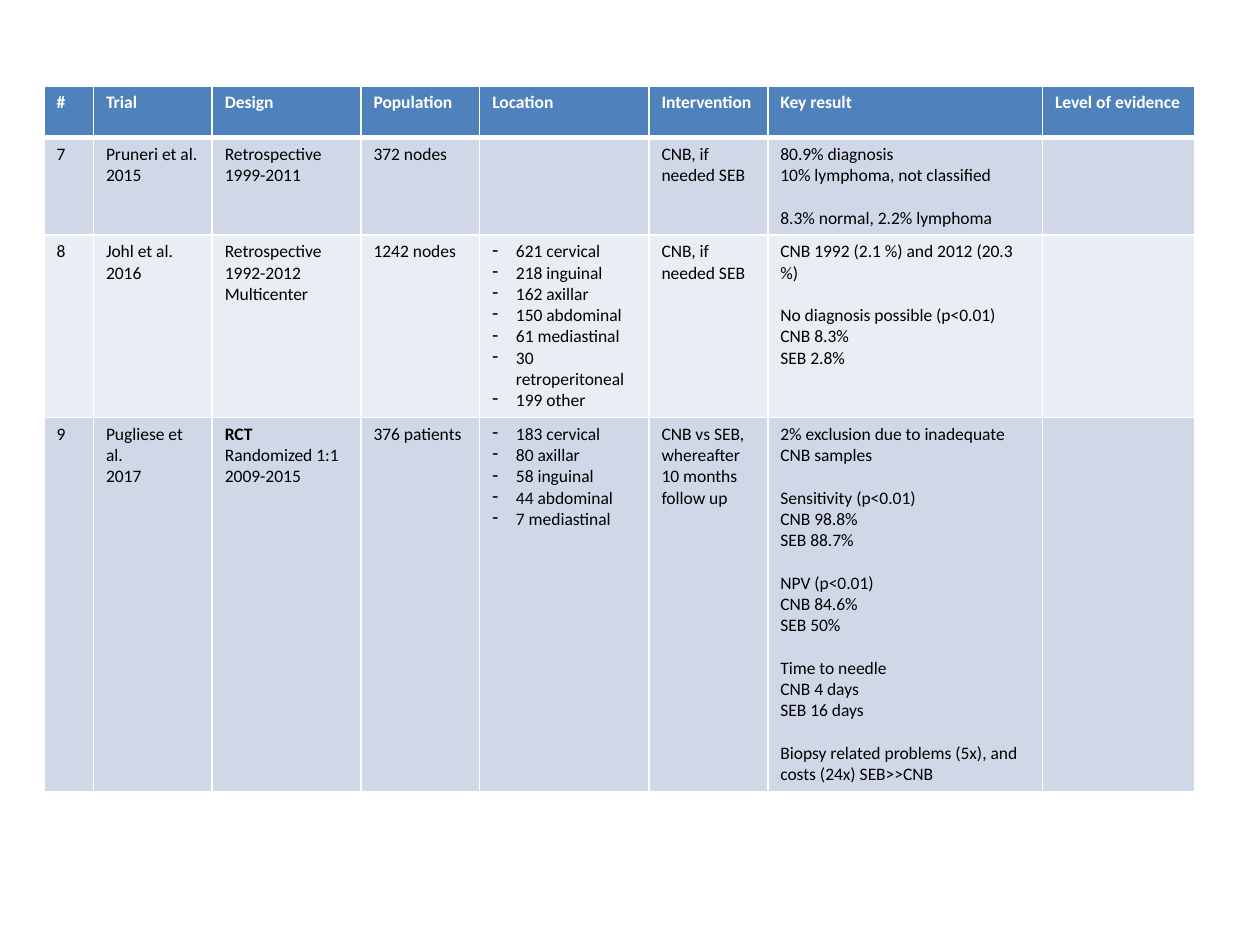
from dataclasses import dataclass

from lxml.etree import SubElement
from pptx import Presentation
from pptx.dml.color import RGBColor
from pptx.oxml.ns import qn
from pptx.util import Pt

FONT_SIZE = 10
BLANK_LINE = 12.2
BULLET_INDENT = 13.5
ROW_HEIGHT = 29.5
COLUMN_WIDTHS = (28.2, 67.9, 85, 67.9, 96.7, 67.9, 157, 87.1)
HEADER_FILL, ODD_FILL, EVEN_FILL = "4F81BD", "D0D8E8", "E9EDF4"
WHITE, BLACK = "FFFFFF", "000000"


@dataclass(frozen=True)
class CellText:
    """Groups of lines; a gap separates one group from the next."""
    groups: tuple[tuple[str, ...], ...] = ()
    bulleted: bool = False
    bold_lines: tuple[str, ...] = ()


def lines(*texts: str) -> CellText:
    return CellText((texts,))


def groups(*line_groups: tuple[str, ...]) -> CellText:
    return CellText(line_groups)


def bullets(*texts: str) -> CellText:
    return CellText((texts,), bulleted=True)


HEADERS = ("#", "Trial", "Design", "Population", "Location",
           "Intervention", "Key result", "Level of evidence")
EMPTY = CellText()

TRIALS = (
    (lines("7"), lines("Pruneri et al.", "2015"),
     lines("Retrospective", "1999-2011"), lines("372 nodes"), EMPTY,
     lines("CNB, if needed SEB"),
     groups(("80.9% diagnosis", "10% lymphoma, not classified"),
            ("8.3% normal, 2.2% lymphoma",)),
     EMPTY),
    (lines("8"), lines("Johl et al.", "2016"),
     lines("Retrospective", "1992-2012", "Multicenter"), lines("1242 nodes"),
     bullets("621 cervical", "218 inguinal", "162 axillar", "150 abdominal",
             "61 mediastinal", "30 retroperitoneal", "199 other"),
     lines("CNB, if needed SEB"),
     groups(("CNB 1992 (2.1 %) and 2012 (20.3 %)",),
            ("No diagnosis possible (p<0.01)", "CNB 8.3%", "SEB 2.8%")),
     EMPTY),
    (lines("9"), lines("Pugliese et al.", "2017"),
     CellText((("RCT", "Randomized 1:1", "2009-2015"),), bold_lines=("RCT",)),
     lines("376 patients"),
     bullets("183 cervical", "80 axillar", "58 inguinal", "44 abdominal",
             "7 mediastinal"),
     lines("CNB vs SEB, whereafter 10 months follow up"),
     groups(("2% exclusion due to inadequate CNB samples",),
            ("Sensitivity (p<0.01)", "CNB 98.8%", "SEB 88.7%"),
            ("NPV (p<0.01)", "CNB 84.6%", "SEB 50%"),
            ("Time to needle", "CNB 4 days", "SEB 16 days"),
            ("Biopsy related problems (5x), and costs (24x) SEB>>CNB",)),
     EMPTY),
)


def color(hex_value: str) -> RGBColor:
    return RGBColor.from_string(hex_value)


def set_borders(cell, top: float, bottom: float) -> None:
    properties = cell._tc.get_or_add_tcPr()
    for side, width in (("L", 1), ("R", 1), ("T", top), ("B", bottom)):
        line = SubElement(properties, qn(f"a:ln{side}"), w=str(Pt(width)))
        fill = SubElement(line, qn("a:solidFill"))
        SubElement(fill, qn("a:srgbClr"), val=WHITE)


def add_bullet(paragraph) -> None:
    properties = paragraph._p.get_or_add_pPr()
    properties.set("marL", str(Pt(BULLET_INDENT)))
    properties.set("indent", str(-Pt(BULLET_INDENT)))
    SubElement(properties, qn("a:buChar"), char="-")


def write_text(cell, content: CellText, text_color: str, bold: bool) -> None:
    frame = cell.text_frame
    paragraph = None
    for group in content.groups:
        for index, text in enumerate(group):
            starts_gap = paragraph is not None and index == 0
            paragraph = frame.add_paragraph() if paragraph else frame.paragraphs[0]
            paragraph.text = text
            if content.bulleted:
                add_bullet(paragraph)
            if starts_gap:
                paragraph.space_before = Pt(BLANK_LINE)
            font = paragraph.font
            font.name = "Calibri"
            font.size = Pt(FONT_SIZE)
            font.bold = bold or text in content.bold_lines
            font.color.rgb = color(text_color)


def draw_row(table, row: int, contents: tuple[CellText, ...]) -> None:
    is_header = row == 0
    fill = HEADER_FILL if is_header else ODD_FILL if row % 2 else EVEN_FILL
    for column, content in enumerate(contents):
        cell = table.cell(row, column)
        # The rule below the header is thicker than the others
        set_borders(cell, top=3 if row == 1 else 1, bottom=3 if is_header else 1)
        cell.fill.solid()
        cell.fill.fore_color.rgb = color(fill)
        write_text(cell, content, WHITE if is_header else BLACK, is_header)


def main() -> None:
    presentation = Presentation()
    presentation.slide_width, presentation.slide_height = Pt(720), Pt(540)
    slide = presentation.slides.add_slide(presentation.slide_layouts[6])

    # Table grid
    rows = (tuple(lines(header) for header in HEADERS), *TRIALS)
    shape = slide.shapes.add_table(
        len(rows), len(HEADERS), Pt(25.2), Pt(49),
        Pt(sum(COLUMN_WIDTHS)), Pt(ROW_HEIGHT * len(rows)))
    table = shape.table
    for column, width in zip(table.columns, COLUMN_WIDTHS):
        column.width = Pt(width)

    # Header and trials
    for row, contents in enumerate(rows):
        draw_row(table, row, contents)

    # Rows grow with their text to this total
    shape.height = Pt(399)
    presentation.save("out.pptx")


if __name__ == "__main__":
    main()
